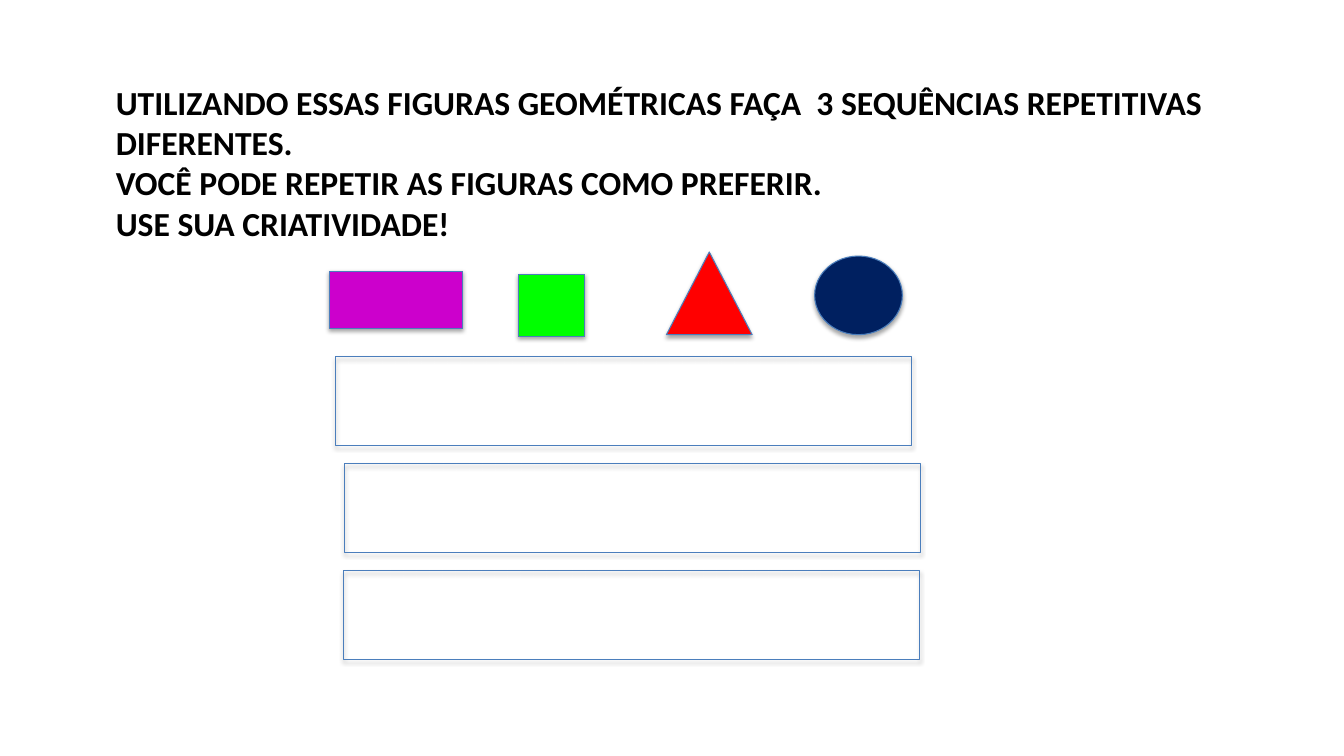
from lxml import etree
from pptx import Presentation
from pptx.dml.color import RGBColor
from pptx.enum import shapes, text
from pptx.oxml import ns
from pptx.util import Inches, Pt

COLORS = {
    "text": "000000",
    "outline": "4B7EBC",
    "shadow": "000000",
    "purple": "CC00CC",
    "green": "00FF00",
    "red": "FF0000",
    "navy": "002060",
}
INSTRUCTIONS = [
    "UTILIZANDO ESSAS FIGURAS GEOMÉTRICAS FAÇA  3 SEQUÊNCIAS REPETITIVAS DIFERENTES.",
    "VOCÊ PODE REPETIR AS FIGURAS COMO PREFERIR.",
    "USE SUA CRIATIVIDADE!",
]
KINDS = shapes.MSO_SHAPE


def rgb(name):
    return RGBColor.from_string(COLORS[name])


def add_text(slide, box, lines, size=24, bold=True, font="Calibri", color="text"):
    frame = slide.shapes.add_textbox(*map(Inches, box)).text_frame
    frame.word_wrap = True
    frame.auto_size = text.MSO_AUTO_SIZE.SHAPE_TO_FIT_TEXT
    for index, line in enumerate(lines):
        paragraph = frame.paragraphs[0] if index == 0 else frame.add_paragraph()
        run = paragraph.add_run()
        run.text = line
        run.font.size, run.font.bold, run.font.name = Pt(size), bold, font
        run.font.color.rgb = rgb(color)


def add_shadow(shape):
    """Give the shape a soft shadow that falls straight down."""
    shape.shadow.inherit = False
    effects = shape._element.spPr.find(ns.qn("a:effectLst"))
    shadow = etree.SubElement(
        effects, ns.qn("a:outerShdw"), blurRad=str(Pt(3.1)), dist=str(Pt(1.8)),
        dir=str(90 * 60000), rotWithShape="0")
    color = etree.SubElement(shadow, ns.qn("a:srgbClr"), val=COLORS["shadow"])
    etree.SubElement(color, ns.qn("a:alpha"), val="35000")


def add_figure(slide, kind, box, fill=None):
    shape = slide.shapes.add_shape(kind, *map(Inches, box))
    if fill:
        shape.fill.solid()
        shape.fill.fore_color.rgb = rgb(fill)
    else:
        shape.fill.background()
    shape.line.color.rgb = rgb("outline")
    shape.line.width = Pt(0.75)
    add_shadow(shape)


def add_sample_figures(slide, left, top):
    # Kind, offset from the row's corner, size and fill
    figures = [
        (KINDS.RECTANGLE, 0, 0.19, 1.32, 0.57, "purple"),
        (KINDS.RECTANGLE, 1.87, 0.22, 0.66, 0.62, "green"),
        (KINDS.ISOSCELES_TRIANGLE, 3.34, 0, 0.85, 0.82, "red"),
        (KINDS.OVAL, 4.81, 0.04, 0.87, 0.78, "navy"),
    ]
    for kind, x, y, width, height, fill in figures:
        add_figure(slide, kind, (left + x, top + y, width, height), fill)


def add_answer_frames(slide, left, top, width, height, gap):
    for row, indent in enumerate((0, 0.09, 0.08)):
        box = (left + indent, top + row * (height + gap), width, height)
        add_figure(slide, KINDS.RECTANGLE, box)


def main():
    presentation = Presentation()
    presentation.slide_width = Inches(13.33)
    presentation.slide_height = Inches(7.5)
    slide = presentation.slides.add_slide(presentation.slide_layouts[6])

    # Instructions
    add_text(slide, (1.05, 0.76, 12.07, 1.72), INSTRUCTIONS)
    # Figures to use in the sequences
    add_sample_figures(slide, 3.27, 2.5)
    # Empty frames for the three sequences
    add_answer_frames(slide, 3.33, 3.54, 5.71, 0.88, gap=0.18)

    presentation.save("out.pptx")


if __name__ == "__main__":
    main()
